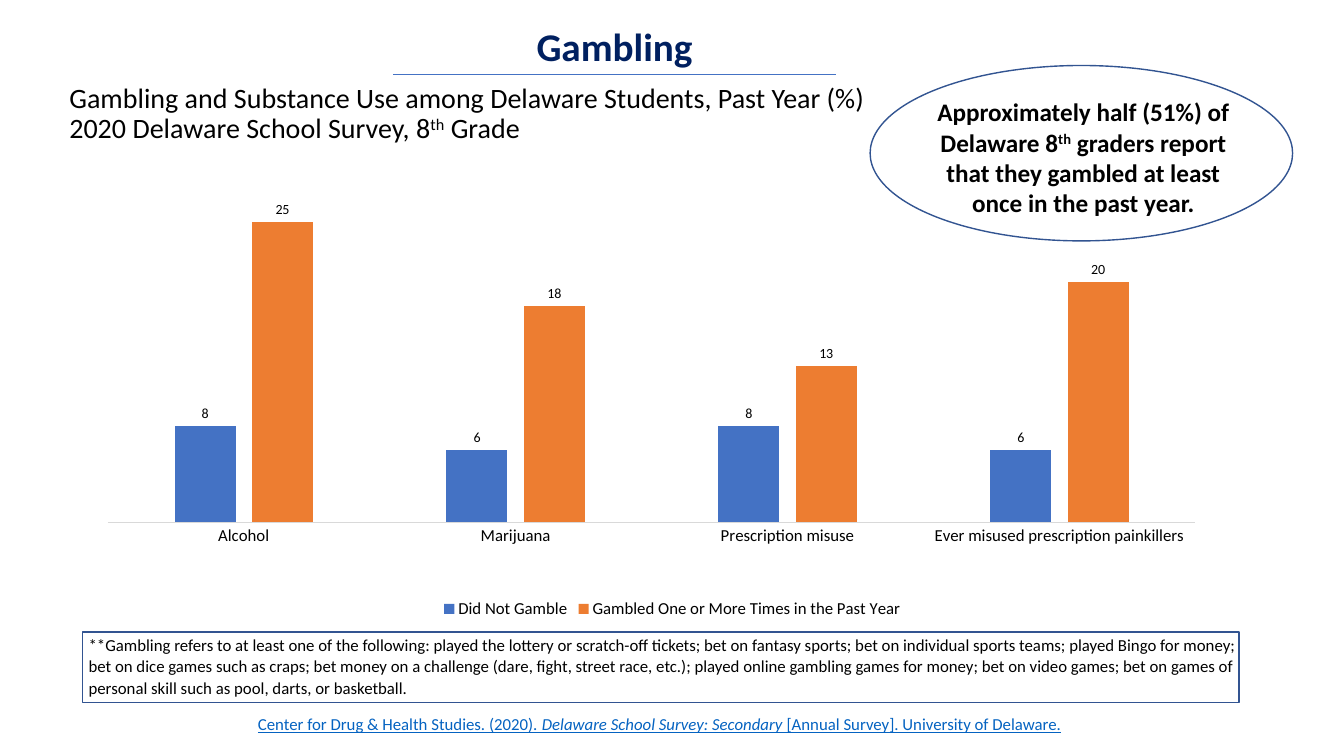
from lxml import etree
from pptx import Presentation
from pptx.chart.data import CategoryChartData
from pptx.dml.color import RGBColor
from pptx.enum.chart import XL_CHART_TYPE as ChartType
from pptx.enum.chart import XL_LABEL_POSITION as LabelPosition
from pptx.enum.chart import XL_LEGEND_POSITION as LegendPosition
from pptx.enum.chart import XL_TICK_MARK as TickMark
from pptx.enum.shapes import MSO_CONNECTOR as Connector
from pptx.enum.shapes import MSO_SHAPE as Shape
from pptx.enum.text import MSO_ANCHOR as Anchor
from pptx.enum.text import PP_ALIGN as Align
from pptx.oxml.ns import qn
from pptx.util import Inches, Pt

FONT = "Calibri"
BLACK = RGBColor(0x00, 0x00, 0x00)
NAVY = RGBColor(0x00, 0x20, 0x60)
BLUE = RGBColor(0x44, 0x72, 0xC4)
ORANGE = RGBColor(0xED, 0x7D, 0x31)
OUTLINE = RGBColor(0x32, 0x54, 0x91)
LINK_BLUE = RGBColor(0x05, 0x63, 0xC1)
AXIS_GREY = RGBColor(0xD9, 0xD9, 0xD9)

CATEGORIES = ["Alcohol", "Marijuana", "Prescription misuse",
              "Ever misused prescription painkillers"]
SERIES = [("Did Not Gamble", (8, 6, 8, 6), BLUE),
          ("Gambled One or More Times in the Past Year", (25, 18, 13, 20), ORANGE)]
PLOT_LAYOUT = {"layoutTarget": "inner", "xMode": "edge", "yMode": "edge",
               "x": 0.013, "y": 0.039, "w": 0.938, "h": 0.751}
DEFINITION = (
    "**Gambling refers to at least one of the following: played the lottery or "
    "scratch-off tickets; bet on fantasy sports; bet on individual sports teams; "
    "played Bingo for money; bet on dice games such as craps; bet money on a "
    "challenge (dare, fight, street race, etc.); played online gambling games for "
    "money; bet on video games; bet on games of personal skill such as pool, darts, "
    "or basketball.")


def set_font(font, size, color=BLACK):
    """Apply the slide typeface with a size and colour."""
    font.name = FONT
    font.size = Pt(size)
    font.color.rgb = color


def add_text(slide, box, pieces, size, color=BLACK, bold=None, underline=None,
             align=Align.LEFT, anchor=Anchor.TOP, spacing=None, indent=0):
    """Add a text box from (text, style) pieces, where a newline breaks the line."""
    frame = slide.shapes.add_textbox(*map(Inches, box)).text_frame
    frame.word_wrap = True
    frame.vertical_anchor = anchor
    paragraph = frame.paragraphs[0]
    paragraph.alignment = align
    if spacing:
        paragraph.line_spacing = spacing
    if indent:
        paragraph._p.get_or_add_pPr().set("marL", str(Inches(indent)))
    for text, style in pieces:
        for number, line in enumerate(text.split("\n")):
            if number:
                paragraph.add_line_break()
            run = paragraph.add_run()
            run.text = line
            set_font(run.font, size, color)
            run.font.bold = bold
            run.font.underline = underline
            if style == "italic":
                run.font.italic = True
            if style == "superscript":
                run._r.get_or_add_rPr().set("baseline", "30000")


def add_outline(slide, kind, box):
    """Add an unfilled preset shape with a blue outline."""
    shape = slide.shapes.add_shape(kind, *map(Inches, box))
    shape.shadow.inherit = False
    shape.fill.background()
    shape.line.color.rgb = OUTLINE
    shape.line.width = Pt(1)


def add_rule(slide, left, right, top):
    """Add a thin horizontal line."""
    rule = slide.shapes.add_connector(
        Connector.STRAIGHT, Inches(left), Inches(top), Inches(right), Inches(top))
    rule.line.color.rgb = BLUE
    rule.line.width = Pt(0.5)
    etree.SubElement(rule._element.spPr, qn("a:effectLst"))


def set_plot_layout(chart):
    """Fix the inner plot area within the chart."""
    plot_area = chart._chartSpace.chart.plotArea
    for layout in plot_area.findall(qn("c:layout")):
        plot_area.remove(layout)
    layout = etree.Element(qn("c:layout"))
    manual = etree.SubElement(layout, qn("c:manualLayout"))
    for name, value in PLOT_LAYOUT.items():
        etree.SubElement(manual, qn(f"c:{name}")).set("val", str(value))
    plot_area.insert(0, layout)


def add_column_chart(slide, box):
    """Add the clustered columns comparing substance use."""
    data = CategoryChartData()
    data.categories = CATEGORIES
    for name, values, _ in SERIES:
        data.add_series(name, values)
    chart = slide.shapes.add_chart(
        ChartType.COLUMN_CLUSTERED, *map(Inches, box), data).chart
    set_font(chart.font, 10)
    chart.has_title = False
    chart.has_legend = True
    chart.legend.position = LegendPosition.BOTTOM
    chart.legend.include_in_layout = False
    set_font(chart.legend.font, 12)

    category_axis = chart.category_axis
    category_axis.major_tick_mark = TickMark.NONE
    category_axis.format.line.color.rgb = AXIS_GREY
    category_axis.format.line.width = Pt(0.75)
    set_font(category_axis.tick_labels.font, 12)
    value_axis = chart.value_axis
    value_axis.minimum_scale = 0
    value_axis.maximum_scale = 30
    value_axis.has_major_gridlines = False
    value_axis.visible = False

    plot = chart.plots[0]
    plot.gap_width = 219
    plot.overlap = -27
    plot.vary_by_categories = False
    for series, (_, _, color) in zip(plot.series, SERIES):
        series.format.fill.solid()
        series.format.fill.fore_color.rgb = color
        labels = series.data_labels
        labels.show_value = True
        labels.position = LabelPosition.OUTSIDE_END
        set_font(labels.font, 10)
    set_plot_layout(chart)


def main():
    """Build the gambling slide and save it."""
    presentation = Presentation()
    presentation.slide_width = Inches(13.33)
    presentation.slide_height = Inches(7.5)
    slide = presentation.slides.add_slide(presentation.slide_layouts[6])

    add_text(slide, (0.59, 0.41, 11.5, 1.45),
             [("Gambling and Substance Use among Delaware Students, Past Year (%)\n"
               "2020 Delaware School Survey, 8", None),
              ("th", "superscript"), (" Grade", None)],
             size=20, anchor=Anchor.MIDDLE, spacing=0.9)
    add_text(slide, (5.11, 0.17, 1.97, 0.57), [("Gambling", None)],
             size=28, color=NAVY, bold=True, align=Align.CENTER)
    add_rule(slide, 3.9, 8.29, 0.74)
    add_text(slide, (2.4, 7.02, 9.08, 0.31),
             [("Center for Drug & Health Studies. (2020). ", None),
              ("Delaware School Survey: Secondary", "italic"),
              (" [Annual Survey]. University of Delaware.", None)],
             size=12, color=LINK_BLUE, underline=True, spacing=1.07, indent=0.06)
    add_text(slide, (0.59, 6.23, 11.82, 0.74), [(DEFINITION, None)],
             size=12, spacing=1.07, indent=0.19)
    add_outline(slide, Shape.RECTANGLE, (0.82, 6.27, 11.47, 0.7))
    add_column_chart(slide, (0.92, 1.42, 11.5, 4.76))
    add_text(slide, (9.07, 0.91, 3.35, 1.31),
             [("Approximately half (51%) of Delaware 8", None),
              ("th", "superscript"),
              (" graders report that they gambled at least once in the past year.",
               None)],
             size=18, bold=True, align=Align.CENTER)
    add_outline(slide, Shape.OVAL, (8.63, 0.65, 4.19, 1.74))

    presentation.save("out.pptx")


if __name__ == "__main__":
    main()
